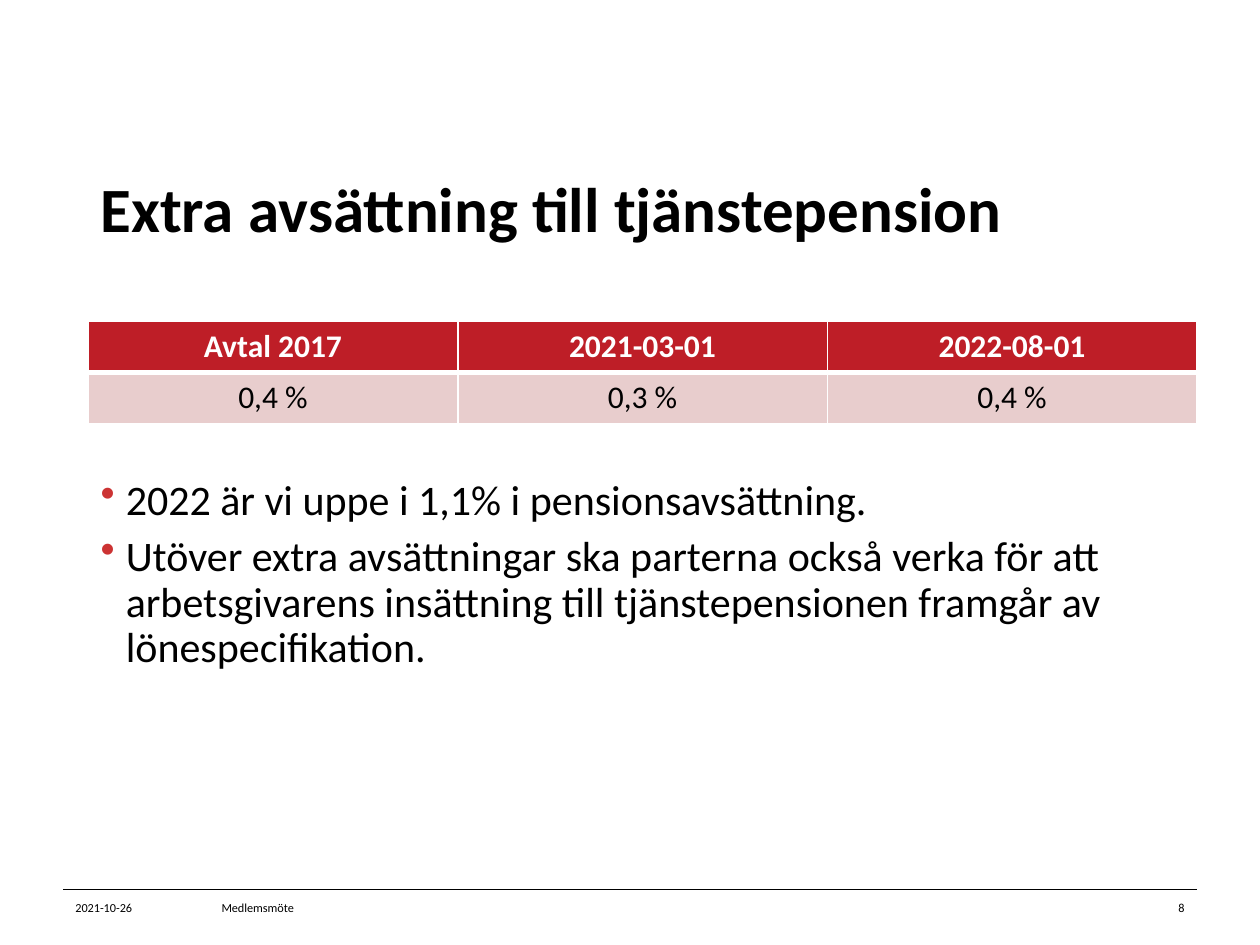
from lxml.etree import SubElement
from pptx import Presentation
from pptx.dml.color import RGBColor
from pptx.enum.shapes import MSO_CONNECTOR as Connector
from pptx.enum.text import MSO_ANCHOR as Anchor, PP_ALIGN as Align
from pptx.oxml.ns import qn
from pptx.util import Inches, Pt

BLACK = RGBColor(0x00, 0x00, 0x00)
WHITE = RGBColor(0xFF, 0xFF, 0xFF)
RED = RGBColor(0xBE, 0x1E, 0x27)
PINK = RGBColor(0xE8, 0xCD, 0xCD)
BULLET_RED = RGBColor(0xCC, 0x33, 0x33)


def write(para, text, size, color=BLACK, bold=False, align=Align.LEFT, line=None, after=0, bullet=False):
    para.alignment = align
    para.space_after = Pt(after)
    if line:
        para.line_spacing = Pt(line)
    if bullet:
        props = para._p.get_or_add_pPr()
        props.set("marL", str(Inches(0.2)))
        props.set("indent", str(Inches(-0.2)))
        bullet_color = SubElement(props, qn("a:buClr"))
        SubElement(bullet_color, qn("a:srgbClr"), val=str(BULLET_RED))
        SubElement(props, qn("a:buChar"), char="•")
    span = para.add_run()
    span.text = text
    span.font.name = "Calibri"
    span.font.size = Pt(size)
    span.font.bold = bold
    span.font.color.rgb = color


def add_box(left, top, width, height, anchor=Anchor.MIDDLE):
    box = page.shapes.add_textbox(Inches(left), Inches(top), Inches(width), Inches(height))
    box.text_frame.word_wrap = True
    box.text_frame.vertical_anchor = anchor
    return box.text_frame


deck = Presentation()
deck.slide_width = Inches(10)
deck.slide_height = Inches(7.5)
page = deck.slides.add_slide(deck.slide_layouts[6])

rule = page.shapes.add_connector(Connector.STRAIGHT, Inches(0.5), Inches(7.06), Inches(9.5), Inches(7.06))
rule.line.color.rgb = BLACK
rule.line.width = Pt(0.25)
SubElement(rule._element.spPr, qn("a:effectLst"))

title = add_box(0.7, 1.1, 8.8, 1.25)
write(title.paragraphs[0], "Extra avsättning till tjänstepension", 36, bold=True, line=32)

body = add_box(0.7, 3.75, 8.8, 3.01, Anchor.TOP)
points = [
    "2022 är vi uppe i 1,1% i pensionsavsättning.",
    "Utöver extra avsättningar ska parterna också verka för att arbetsgivarens "
    "insättning till tjänstepensionen framgår av lönespecifikation.",
]
for index, point in enumerate(points):
    para = body.add_paragraph() if index else body.paragraphs[0]
    write(para, point, 24, line=26, after=6, bullet=True)

footers = [
    ("2021-10-26", 0.5, 0.96, Align.LEFT),
    ("Medlemsmöte", 1.66, 6.69, Align.LEFT),
    ("8", 8.55, 0.95, Align.RIGHT),
]
for text, left, width, align in footers:
    footer = add_box(left, 7.06, width, 0.29)
    write(footer.paragraphs[0], text, 7, align=align)

rows = [
    ["Avtal 2017", "2021-03-01", "2022-08-01"],
    ["0,4 %", "0,3 %", "0,4 %"],
]
row_styles = [(RED, WHITE, True, 3, 1), (PINK, BLACK, False, 1, 3)]
table = page.shapes.add_table(2, 3, Inches(0.7), Inches(2.55), Inches(8.8), Inches(0.81)).table
for row_index, (values, style) in enumerate(zip(rows, row_styles)):
    fill, color, bold, bottom, top = style
    for column_index, value in enumerate(values):
        cell = table.cell(row_index, column_index)
        props = cell._tc.get_or_add_tcPr()
        for side, width in (("L", 1), ("R", 1), ("T", top), ("B", bottom)):
            border = SubElement(props, qn(f"a:ln{side}"), w=str(Pt(width)))
            border_fill = SubElement(border, qn("a:solidFill"))
            SubElement(border_fill, qn("a:srgbClr"), val=str(WHITE))
        cell.fill.solid()
        cell.fill.fore_color.rgb = fill
        write(cell.text_frame.paragraphs[0], value, 18, color=color, bold=bold, align=Align.CENTER)

deck.save("out.pptx")
